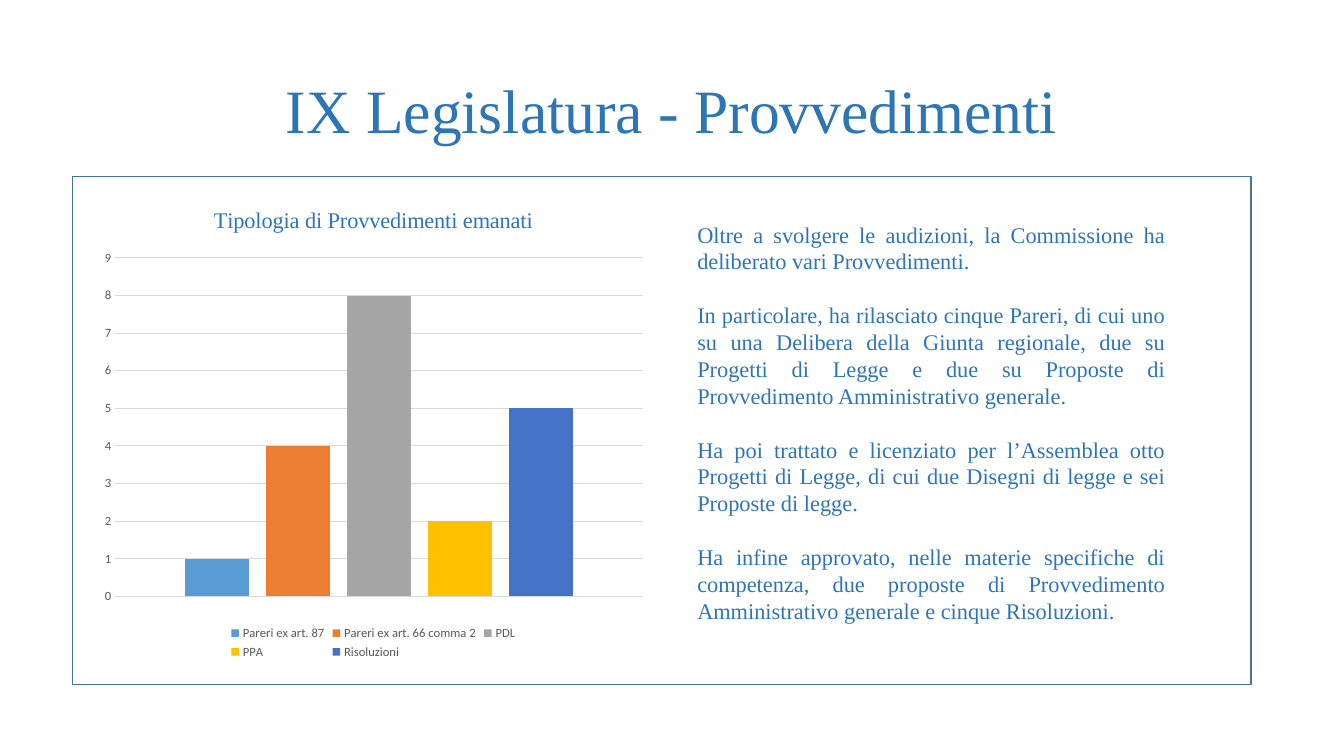
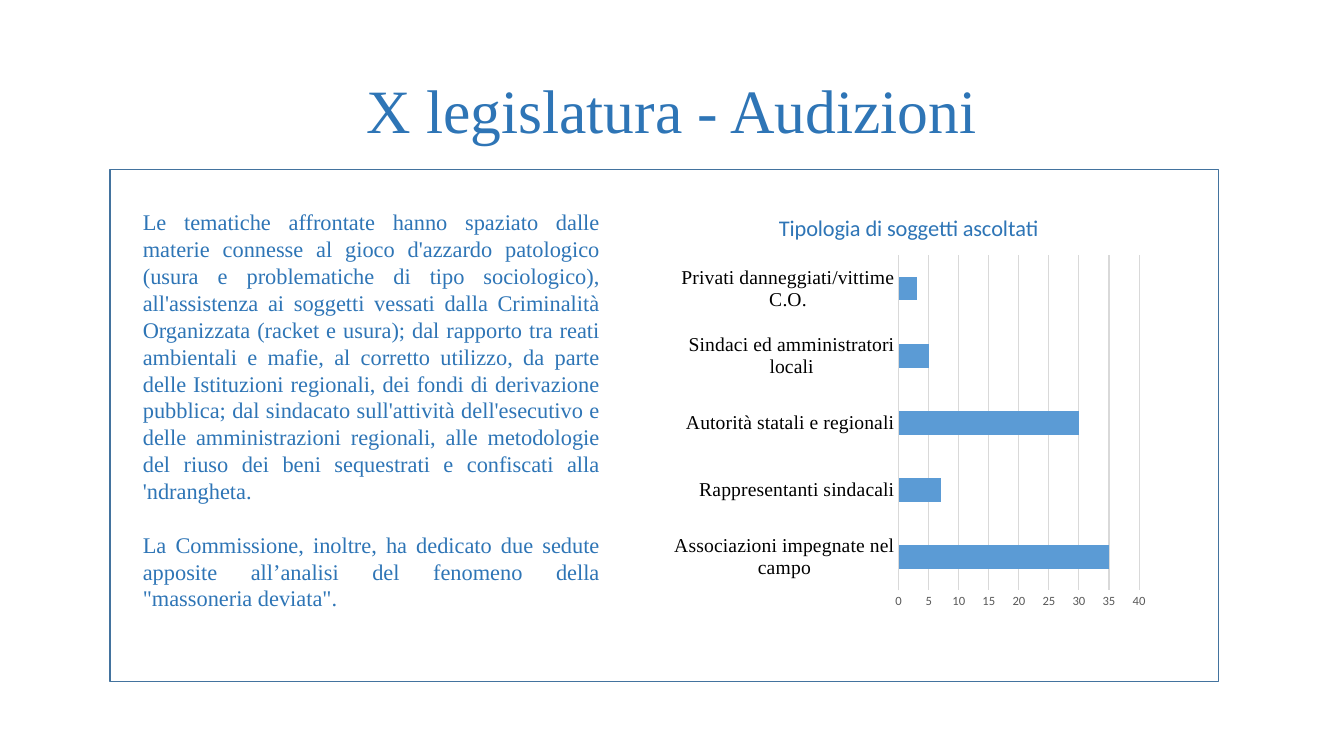
"""Builds two slides on the provisions and hearings of a regional commission."""
from dataclasses import dataclass

from lxml import etree
from pptx import Presentation
from pptx.chart.data import CategoryChartData
from pptx.dml.color import RGBColor
from pptx.enum.chart import XL_CHART_TYPE, XL_LEGEND_POSITION, XL_TICK_MARK
from pptx.enum.shapes import MSO_SHAPE
from pptx.enum.text import MSO_ANCHOR, PP_ALIGN
from pptx.oxml.ns import qn
from pptx.util import Pt

COLUMNS = XL_CHART_TYPE.COLUMN_CLUSTERED
BARS = XL_CHART_TYPE.BAR_CLUSTERED
BOTTOM = XL_LEGEND_POSITION.BOTTOM
NO_TICK = XL_TICK_MARK.NONE
RECTANGLE = MSO_SHAPE.RECTANGLE
MIDDLE = MSO_ANCHOR.MIDDLE
CENTER, JUSTIFY = PP_ALIGN.CENTER, PP_ALIGN.JUSTIFY


@dataclass(frozen=True)
class Theme:
    """Colours, fonts and type sizes shared by the slides."""
    heading: str = "2E75B6"
    frame: str = "43739E"
    grid: str = "D9D9D9"
    label: str = "595959"
    ink: str = "000000"
    series: tuple = ("5B9BD5", "ED7D31", "A5A5A5", "FFC000", "4472C4")
    serif: str = "Times New Roman"
    sans: str = "Calibri"
    title_size: float = 44
    body_size: float = 16
    category_size: float = 14
    label_size: float = 9
    paragraph_gap: float = 19.2


@dataclass(frozen=True)
class Box:
    """A rectangle in points."""
    left: float
    top: float
    width: float
    height: float

    def inside(self, dx, dy, width, height):
        """Return a box offset from this one."""
        return Box(self.left + dx, self.top + dy, width, height)

    def lengths(self):
        """Return the position and size as lengths."""
        return [Pt(v) for v in (self.left, self.top, self.width, self.height)]


THEME = Theme()
TITLE_BOX = Box(66, 28.8, 828, 104.4)


def style_font(font, name, size, color):
    """Set the face, size and colour of a font."""
    font.name, font.size, font.bold = name, Pt(size), False
    font.color.rgb = RGBColor.from_string(color)


def style_line(line, color, width):
    """Set the colour and width of a line."""
    line.color.rgb = RGBColor.from_string(color)
    line.width = Pt(width)


def add_title(slide, box, title):
    """Place the centred slide title."""
    frame = slide.shapes.add_textbox(*box.lengths()).text_frame
    frame.word_wrap = True
    frame.vertical_anchor = MIDDLE
    frame.text = title
    paragraph = frame.paragraphs[0]
    paragraph.alignment, paragraph.line_spacing = CENTER, 0.9
    style_font(paragraph.runs[0].font, THEME.serif, THEME.title_size, THEME.heading)


def add_body(slide, box, passages):
    """Place justified passages with even gaps."""
    frame = slide.shapes.add_textbox(*box.lengths()).text_frame
    frame.word_wrap = True
    frame.text = "\n".join(passages)
    for paragraph in frame.paragraphs:
        paragraph.alignment = JUSTIFY
        paragraph.space_after = Pt(THEME.paragraph_gap)
        style_font(paragraph.runs[0].font, THEME.serif, THEME.body_size, THEME.heading)


def add_panel(slide, box):
    """Outline the content area."""
    panel = slide.shapes.add_shape(RECTANGLE, *box.lengths())
    panel.shadow.inherit = False
    panel.fill.background()
    style_line(panel.line, THEME.frame, 1)


def set_layout(parent, index, **settings):
    """Give a chart part a manual layout."""
    for old in parent.findall(qn("c:layout")):
        parent.remove(old)
    layout = etree.Element(qn("c:layout"))
    manual = etree.SubElement(layout, qn("c:manualLayout"))
    for key, value in settings.items():
        etree.SubElement(manual, qn(f"c:{key}")).set("val", str(value))
    parent.insert(index, layout)


def add_chart(slide, box, kind, categories, series, heading, heading_font, gap, plot_area):
    """Place a titled bar chart with light gridlines and return it."""
    data = CategoryChartData()
    data.categories = categories
    for name, values in series:
        data.add_series(name, values)
    chart = slide.shapes.add_chart(kind, *box.lengths(), data).chart
    style_font(chart.font, THEME.sans, 10, THEME.ink)
    chart.has_legend = False
    chart.has_title = True
    title_frame = chart.chart_title.text_frame
    title_frame.text = heading
    style_font(title_frame.paragraphs[0].runs[0].font, heading_font, THEME.body_size, THEME.heading)

    plot = chart.plots[0]
    plot.gap_width, plot.vary_by_categories = gap, False
    for bars, color in zip(plot.series, THEME.series):
        bars.format.fill.solid()
        bars.format.fill.fore_color.rgb = RGBColor.from_string(color)

    values_axis = chart.value_axis
    values_axis.major_tick_mark = NO_TICK
    values_axis.format.line.fill.background()
    values_axis.has_major_gridlines = True
    style_line(values_axis.major_gridlines.format.line, THEME.grid, 0.75)
    style_font(values_axis.tick_labels.font, THEME.sans, THEME.label_size, THEME.label)

    x, y, w, h = plot_area
    area = chart.element.find(".//" + qn("c:plotArea"))
    set_layout(area, 0, layoutTarget="inner", xMode="edge", yMode="edge", x=x, y=y, w=w, h=h)
    return chart


def add_provisions(slide, box):
    """Place the column chart of provisions by type."""
    counts = {"Pareri ex art. 87": 1, "Pareri ex art. 66 comma 2": 4, "PDL": 8,
              "PPA": 2, "Risoluzioni": 5}
    chart = add_chart(slide, box, COLUMNS, ["1"], [(name, [n]) for name, n in counts.items()],
                      "Tipologia di Provvedimenti emanati", THEME.serif, 219,
                      (0.04, 0.15, 0.94, 0.71))
    chart.plots[0].overlap = -27
    chart.category_axis.visible = False
    chart.has_legend = True
    chart.legend.position = BOTTOM
    chart.legend.include_in_layout = False
    style_font(chart.legend.font, THEME.sans, THEME.label_size, THEME.label)


def add_hearings(slide, box):
    """Place the bar chart of people heard by type."""
    counts = {"Associazioni impegnate nel campo": 35, "Rappresentanti sindacali": 7,
              "Autorità statali e regionali": 30, "Sindaci ed amministratori locali": 5,
              "Privati danneggiati/vittime C.O.": 3}
    chart = add_chart(slide, box, BARS, list(counts), [("Series 1", list(counts.values()))],
                      "Tipologia di soggetti ascoltati", THEME.sans, 182,
                      (0.48, 0.13, 0.48, 0.72))
    axis = chart.category_axis
    axis.major_tick_mark = NO_TICK
    style_line(axis.format.line, THEME.grid, 0.75)
    style_font(axis.tick_labels.font, THEME.serif, THEME.category_size, THEME.ink)


def build_provisions_slide(slide, panel):
    """Fill the slide on provisions."""
    add_title(slide, TITLE_BOX, "IX Legislatura - Provvedimenti")
    add_provisions(slide, panel.inside(14.4, 7.2, 401, 340.6))
    add_body(slide, panel.inside(439.2, 28.1, 348.5, 298), [
        "Oltre a svolgere le audizioni, la Commissione ha deliberato vari Provvedimenti.",
        "In particolare, ha rilasciato cinque Pareri, di cui uno su una Delibera della Giunta "
        "regionale, due su Progetti di Legge e due su Proposte di Provvedimento "
        "Amministrativo generale.",
        "Ha poi trattato e licenziato per l’Assemblea otto Progetti di Legge, di cui due "
        "Disegni di legge e sei Proposte di legge.",
        "Ha infine approvato, nelle materie specifiche di competenza, due proposte di "
        "Provvedimento Amministrativo generale e cinque Risoluzioni.",
    ])
    add_panel(slide, panel)


def build_hearings_slide(slide, panel):
    """Fill the slide on hearings."""
    add_title(slide, TITLE_BOX, "X legislatura - Audizioni")
    add_hearings(slide, panel.inside(391.7, 18, 357.8, 332.6))
    add_body(slide, panel.inside(16.5, 24.4, 340.6, 319.7), [
        "Le tematiche affrontate hanno spaziato dalle materie connesse al gioco d'azzardo "
        "patologico (usura e problematiche di tipo sociologico), all'assistenza ai soggetti "
        "vessati dalla Criminalità Organizzata (racket e usura); dal rapporto tra reati "
        "ambientali e mafie, al corretto utilizzo, da parte delle Istituzioni regionali, dei "
        "fondi di derivazione pubblica; dal sindacato sull'attività dell'esecutivo e delle "
        "amministrazioni regionali, alle metodologie del riuso dei beni sequestrati e "
        "confiscati alla 'ndrangheta.",
        "La Commissione, inoltre, ha dedicato due sedute apposite all’analisi del fenomeno "
        "della \"massoneria deviata\".",
    ])
    add_panel(slide, panel)


def main():
    """Build and save the presentation."""
    deck = Presentation()
    deck.slide_width, deck.slide_height = Pt(960), Pt(540)
    blank = deck.slide_layouts[6]
    build_provisions_slide(deck.slides.add_slide(blank), Box(51.8, 126, 841.7, 362.9))
    build_hearings_slide(deck.slides.add_slide(blank), Box(78.5, 121, 792, 365.8))
    deck.save("out.pptx")


if __name__ == "__main__":
    main()
